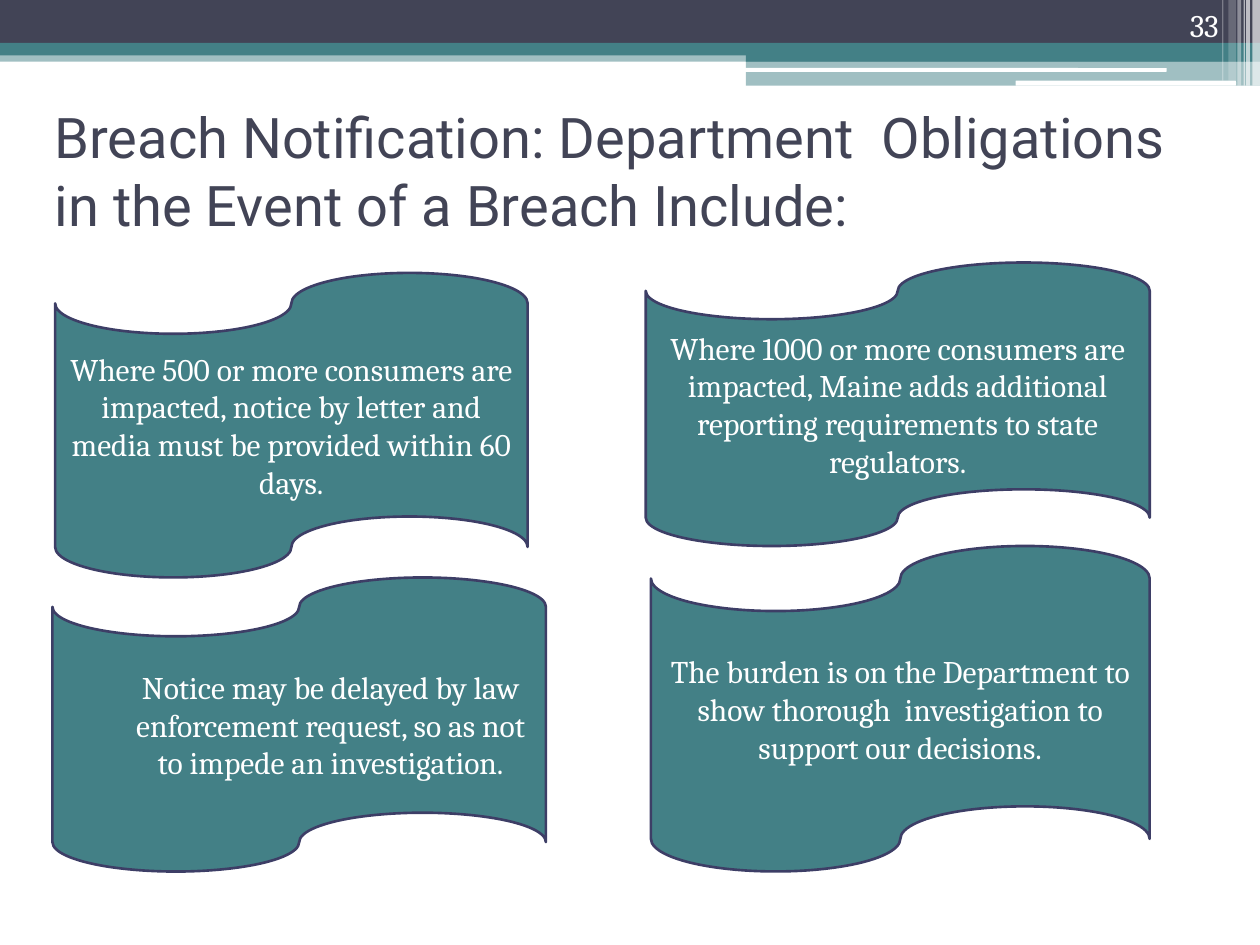
from lxml.etree import SubElement
from pptx import Presentation
from pptx.dml.color import RGBColor
from pptx.enum.shapes import MSO_SHAPE
from pptx.enum.text import MSO_ANCHOR, PP_ALIGN
from pptx.oxml.ns import qn
from pptx.util import Inches, Pt

COLORS = {"teal": "438086", "slate": "424456", "edge": "3D3E66", "white": "FFFFFF"}
BODY_FONT, TITLE_FONT = "Cambria", "Roboto"
COLUMNS, ROWS = 120, 90
HEADER_COLUMNS, HEADER_ROWS = 100, 68

HEADER_BARS = [
    ((0, 40, 100, 9), "teal", 50),
    ((0, 0, 100, 34), "slate", 100),
    ((0, 34, 100, 10), "teal", 100),
    ((59.2, 39, 40.8, 10), "teal", 100),
    ((59.2, 48, 40.8, 20), "teal", 50),
]
HEADER_SLITS = [(59.1, 54, 33.5, 3), (80.6, 64, 17.5, 4)]
HEADER_STRIPES = [
    (99.4, 0.6, 68, 65),
    (98.9, 0.3, 68, 65),
    (98.7, 0.1, 68, 60),
    (98.2, 0.3, 68, 40),
    (97.5, 0.6, 64, 20),
    (97, 0.1, 64, 30),
]
TAPES = [
    ((5.25, 26, 45, 29), 0,
     "Where 500 or more consumers are impacted, notice by letter and media "
     "must be provided within 60 days."),
    ((61.5, 25, 48, 27), 0,
     "Where 1000 or more consumers are impacted, Maine adds additional "
     "reporting requirements to state regulators."),
    ((5, 55, 47, 28), 1,
     "Notice may be delayed by law enforcement request, so as not to impede "
     "an investigation."),
    ((62, 52, 47.5, 31), 0,
     "The burden is on the Department to show thorough  investigation to "
     "support our decisions."),
]


def place(box, cell, columns, rows):
    """Turn a cell (column, row, width, height) of a box's grid into lengths."""
    left, top, width, height = box
    column, row, across, down = cell
    return (int(left + width * column / columns), int(top + height * row / rows),
            int(width * across / columns), int(height * down / rows))


def add_filled(slide, kind, box, color, opacity=100):
    """Add a flat shape with no outline, optionally see-through."""
    shape = slide.shapes.add_shape(kind, *box)
    shape.shadow.inherit = False
    shape.fill.solid()
    shape.fill.fore_color.rgb = RGBColor.from_string(COLORS[color])
    shape.line.fill.background()
    if opacity < 100:
        tint = shape.fill._xPr.find(qn("a:solidFill"))[0]
        SubElement(tint, qn("a:alpha")).set("val", str(opacity * 1000))
    return shape


def add_span(para, text, size, font, color):
    """Add one formatted run."""
    span = para.add_run()
    span.text = text
    span.font.size = Pt(size)
    span.font.name = font
    span.font.color.rgb = RGBColor.from_string(COLORS[color])


def add_header(slide, box):
    """Draw the layered band with its slits and fading stripes."""
    def inside(cell):
        """Place a cell on the header grid."""
        return place(box, cell, HEADER_COLUMNS, HEADER_ROWS)

    for cell, color, opacity in HEADER_BARS:
        add_filled(slide, MSO_SHAPE.RECTANGLE, inside(cell), color, opacity)
    for cell in HEADER_SLITS:
        add_filled(slide, MSO_SHAPE.ROUNDED_RECTANGLE, inside(cell), "white")
    for column, width, height, opacity in HEADER_STRIPES:
        add_filled(slide, MSO_SHAPE.RECTANGLE, inside((column, 0, width, height)),
                   "white", opacity)


def add_title(slide, box):
    """Place and format the title placeholder."""
    title = slide.shapes.title
    title.left, title.top, title.width, title.height = box
    frame = title.text_frame
    frame.word_wrap = True
    frame.vertical_anchor = MSO_ANCHOR.BOTTOM
    frame.margin_bottom = Inches(0.2)
    para = frame.paragraphs[0]
    para.alignment = PP_ALIGN.LEFT
    add_span(para, "Breach Notification: Department  Obligations in the Event of "
             "a Breach Include:", 32, TITLE_FONT, "slate")


def add_page_number(slide, box):
    """Write the page number in the header."""
    frame = slide.shapes.add_textbox(*box).text_frame
    frame.word_wrap = True
    frame.vertical_anchor = MSO_ANCHOR.BOTTOM
    para = frame.paragraphs[0]
    para.alignment = PP_ALIGN.RIGHT
    add_span(para, "33", 18, BODY_FONT, "white")


def add_tape(slide, box, level, text):
    """Draw one wavy panel holding an obligation."""
    tape = add_filled(slide, MSO_SHAPE.FLOWCHART_PUNCHED_TAPE, box, "teal")
    tape.line.color.rgb = RGBColor.from_string(COLORS["edge"])
    tape.line.width = Pt(1.5)
    frame = tape.text_frame
    frame.word_wrap = True
    frame.vertical_anchor = MSO_ANCHOR.MIDDLE
    para = frame.paragraphs[0]
    para.alignment = PP_ALIGN.CENTER
    para.level = level
    para._p.get_or_add_pPr().set("marL", str(Inches(0.5) * level))
    add_span(para, text, 18, BODY_FONT, "white")


def main():
    """Build the slide and save the deck."""
    deck = Presentation()
    deck.slide_width, deck.slide_height = Inches(10), Inches(7.5)
    slide = deck.slides.add_slide(deck.slide_layouts[5])
    page = (0, 0, deck.slide_width, deck.slide_height)

    add_header(slide, place(page, (0, 0, 120, 8.16), COLUMNS, ROWS))
    add_title(slide, place(page, (4, 13.33, 112, 11.67), COLUMNS, ROWS))
    add_page_number(slide, place(page, (107.25, 0, 10, 4.8), COLUMNS, ROWS))
    for cell, level, text in TAPES:
        add_tape(slide, place(page, cell, COLUMNS, ROWS), level, text)
    deck.save("out.pptx")


if __name__ == "__main__":
    main()
